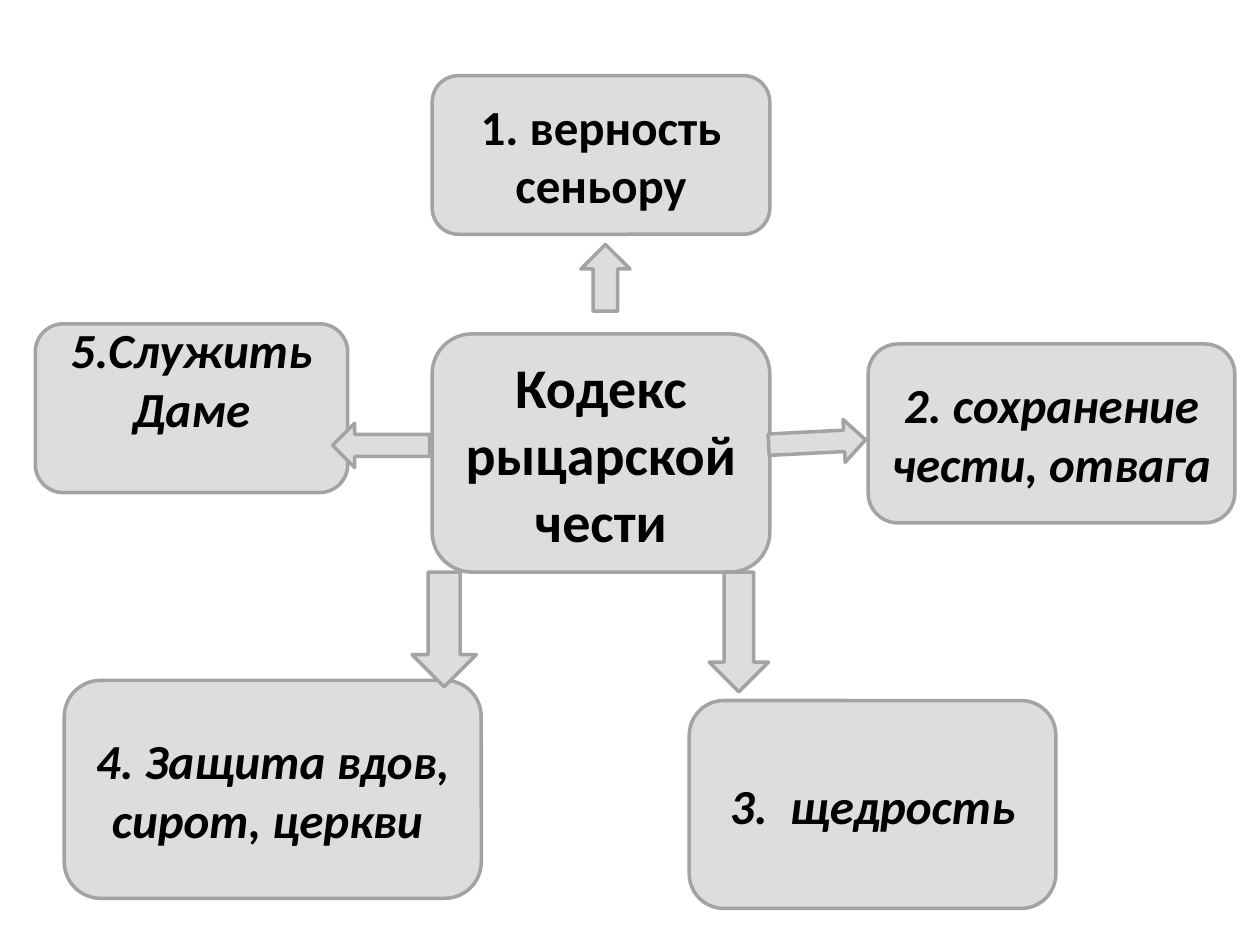
"""Build a slide that shows the knightly code of honour and its five rules."""
from dataclasses import dataclass

import pptx
import pptx.dml.color
import pptx.enum.shapes
import pptx.enum.text
import pptx.util

Inches = pptx.util.Inches
Shapes = pptx.enum.shapes.MSO_SHAPE
FILL, LINE, INK = "DDDDDD", "A3A3A3", "000000"


@dataclass
class Box:
    text: str
    left: float
    top: float
    width: float
    height: float
    size: int = 28
    italic: bool = True
    bottom_margin: float = 0.05


@dataclass
class Arrow:
    kind: Shapes
    left: float
    top: float
    width: float
    height: float
    rotation: float = 0


RULES = [
    Box("1. верность сеньору", 3.43, 0.6, 2.68, 1.26, italic=False),
    Box("3.  щедрость", 5.47, 5.56, 2.91, 1.65),
    Box("4. Защита вдов, сирот, церкви ", 0.51, 5.4, 3.31, 1.73),
    Box("5.Служить\nДаме", 0.28, 2.57, 2.48, 1.34, bottom_margin=0.52),
    Box("2. сохранение чести, отвага", 6.89, 2.73, 2.91, 1.42),
]
CODE = Box("Кодекс рыцарской чести", 3.43, 2.65, 2.68, 1.89, size=32, italic=False)
ARROWS = [
    Arrow(Shapes.DOWN_ARROW, 5.63, 4.54, 0.47, 0.95),
    Arrow(Shapes.UP_ARROW, 4.61, 1.94, 0.39, 0.53),
    Arrow(Shapes.LEFT_ARROW, 2.64, 3.36, 0.77, 0.35),
    Arrow(Shapes.RIGHT_ARROW, 6.1, 3.34, 0.77, 0.34, rotation=-2.9),
    Arrow(Shapes.DOWN_ARROW, 3.27, 4.54, 0.51, 0.91),
]


def color(value: str) -> pptx.dml.color.RGBColor:
    return pptx.dml.color.RGBColor.from_string(value)


def add_outlined(slide, kind: Shapes, item: Box | Arrow):
    position = (item.left, item.top, item.width, item.height)
    shape = slide.shapes.add_shape(kind, *map(Inches, position))
    shape.shadow.inherit = False
    shape.fill.solid()
    shape.fill.fore_color.rgb = color(FILL)
    shape.line.color.rgb = color(LINE)
    shape.line.width = pptx.util.Pt(2)
    return shape


def write_text(frame, text: str, *, size: int, italic: bool, bold: bool = True,
               font: str = "Calibri", ink: str = INK) -> None:
    frame.word_wrap = True
    frame.vertical_anchor = pptx.enum.text.MSO_ANCHOR.MIDDLE
    frame.text = text
    for paragraph in frame.paragraphs:
        paragraph.alignment = pptx.enum.text.PP_ALIGN.CENTER
        for run in paragraph.runs:
            run.font.name = font
            run.font.size = pptx.util.Pt(size)
            run.font.bold = bold
            run.font.italic = italic
            run.font.color.rgb = color(ink)


def draw_box(slide, box: Box) -> None:
    shape = add_outlined(slide, Shapes.ROUNDED_RECTANGLE, box)
    shape.text_frame.margin_bottom = Inches(box.bottom_margin)
    write_text(shape.text_frame, box.text, size=box.size, italic=box.italic)


def draw_arrow(slide, arrow: Arrow) -> None:
    shape = add_outlined(slide, arrow.kind, arrow)
    shape.rotation = arrow.rotation


def main() -> None:
    presentation = pptx.Presentation()
    presentation.slide_width = Inches(10)
    presentation.slide_height = Inches(7.5)
    slide = presentation.slides.add_slide(presentation.slide_layouts[6])
    for box in [*RULES, CODE]:
        draw_box(slide, box)
    for arrow in ARROWS:
        draw_arrow(slide, arrow)
    presentation.save("out.pptx")


if __name__ == "__main__":
    main()
